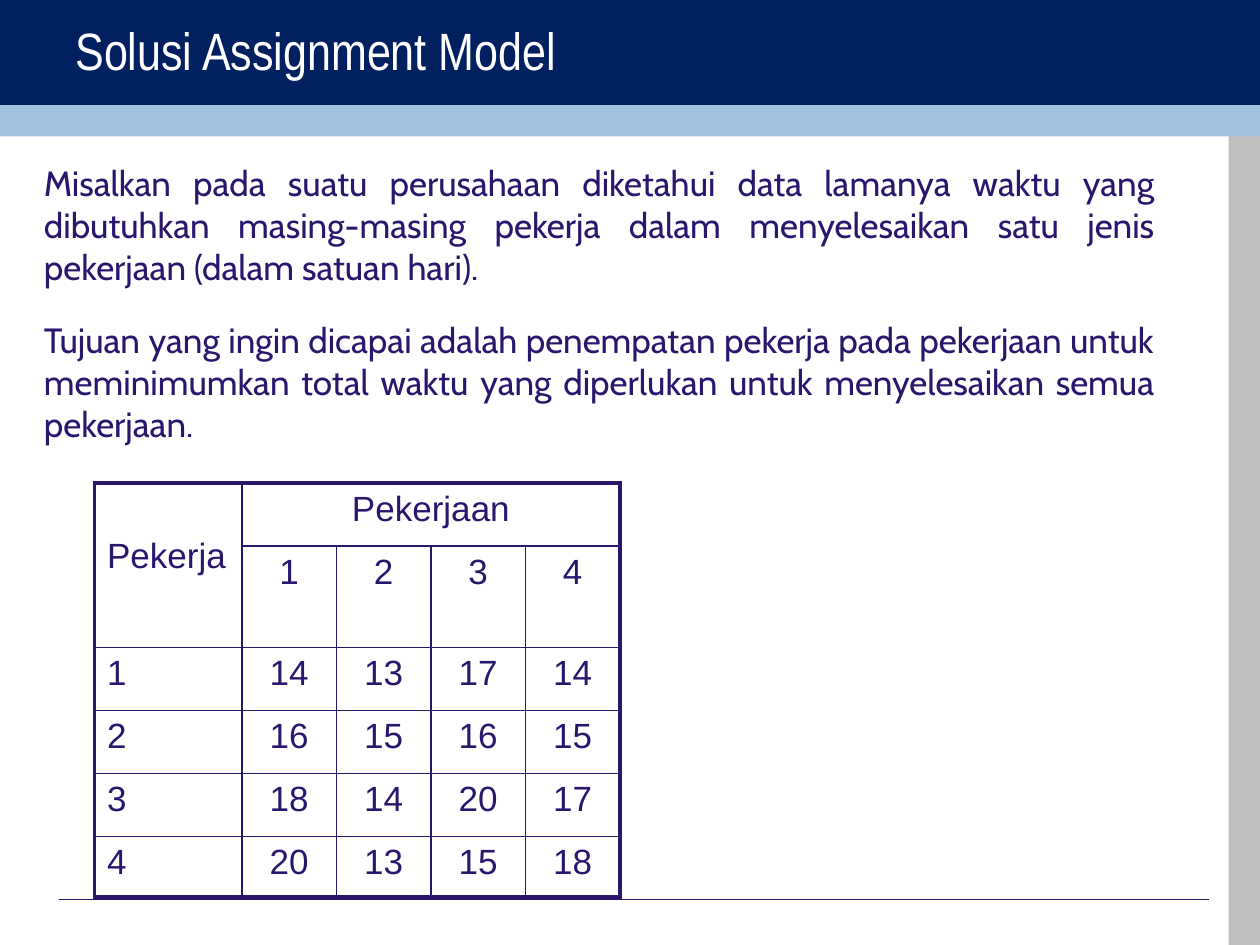
"""Build the assignment model slide with its table of working times."""
import lxml.etree
import pptx
import pptx.dml.color
import pptx.enum.shapes
import pptx.enum.text
import pptx.oxml.ns
import pptx.util

Pt = pptx.util.Pt
ALIGN = pptx.enum.text.PP_ALIGN
ANCHOR = pptx.enum.text.MSO_ANCHOR
NAVY = pptx.dml.color.RGBColor(0x00, 0x20, 0x60)
SKY = pptx.dml.color.RGBColor(0xA3, 0xC2, 0xE0)
SILVER = pptx.dml.color.RGBColor(0xC0, 0xC0, 0xC0)
INDIGO = pptx.dml.color.RGBColor(0x2B, 0x16, 0x6E)
WHITE = pptx.dml.color.RGBColor(0xFF, 0xFF, 0xFF)

BODY = [
    "Misalkan pada suatu perusahaan diketahui data lamanya waktu yang dibutuhkan "
    "masing-masing pekerja dalam menyelesaikan satu jenis pekerjaan (dalam satuan hari).",
    "Tujuan yang ingin dicapai adalah penempatan pekerja pada pekerjaan untuk "
    "meminimumkan total waktu yang diperlukan untuk menyelesaikan semua pekerjaan.",
]
TIMES = [
    ["Pekerja", "Pekerjaan", "", "", ""],
    ["", "1", "2", "3", "4"],
    ["1", "14", "13", "17", "14"],
    ["2", "16", "15", "16", "15"],
    ["3", "18", "14", "20", "17"],
    ["4", "20", "13", "15", "18"],
]
COLUMN_WIDTHS = [84.24, 54, 54, 54, 54]
ROW_HEIGHTS = [36, 56, 36, 36, 36, 34.56]


def add_span(para, text, size, font, color):
    span = para.add_run()
    span.text = text
    span.font.size = Pt(size)
    span.font.name = font
    span.font.color.rgb = color


def add_band(page, left, top, width, height, color):
    band = page.shapes.add_shape(
        pptx.enum.shapes.MSO_SHAPE.RECTANGLE, Pt(left), Pt(top), Pt(width), Pt(height))
    band.shadow.inherit = False
    band.fill.solid()
    band.fill.fore_color.rgb = color
    band.line.fill.background()


def add_rule(page, left, right, y):
    rule = page.shapes.add_connector(
        pptx.enum.shapes.MSO_CONNECTOR.STRAIGHT, Pt(left), Pt(y), Pt(right), Pt(y))
    rule.line.color.rgb = INDIGO
    rule.line.width = Pt(0.75)
    lxml.etree.SubElement(rule._element.spPr, pptx.oxml.ns.qn("a:effectLst"))


def add_text(page, left, top, width, height, texts, size, font, color, align, anchor):
    box = page.shapes.add_textbox(Pt(left), Pt(top), Pt(width), Pt(height))
    frame = box.text_frame
    frame.word_wrap = True
    frame.vertical_anchor = anchor
    for index, text in enumerate(texts):
        para = frame.add_paragraph() if index else frame.paragraphs[0]
        para.alignment = align
        if index:
            para.space_before = Pt(18)
        add_span(para, text, size, font, color)


def add_border(cell, side, width):
    properties = cell._tc.get_or_add_tcPr()
    border = lxml.etree.SubElement(
        properties, pptx.oxml.ns.qn("a:ln" + side), w=str(Pt(width)))
    fill = lxml.etree.SubElement(border, pptx.oxml.ns.qn("a:solidFill"))
    lxml.etree.SubElement(fill, pptx.oxml.ns.qn("a:srgbClr"), val=str(INDIGO))


def style_cell(cell, row, column):
    last_row = row + (cell.span_height if cell.is_merge_origin else 1) == len(TIMES)
    last_column = column + (cell.span_width if cell.is_merge_origin else 1) == len(TIMES[0])
    outer_sides = {"L": column == 0, "R": last_column, "T": row == 0, "B": last_row}
    for side, outer in outer_sides.items():
        add_border(cell, side, 2.25 if outer else 1)
    cell.fill.background()


def add_times_table(page, left, top):
    frame = page.shapes.add_table(
        len(TIMES), len(TIMES[0]), Pt(left), Pt(top),
        Pt(sum(COLUMN_WIDTHS)), Pt(sum(ROW_HEIGHTS)))
    table = frame.table
    table.first_row = False
    table.horz_banding = False
    for column, width in zip(table.columns, COLUMN_WIDTHS):
        column.width = Pt(width)
    for row, height in zip(table.rows, ROW_HEIGHTS):
        row.height = Pt(height)
    table.cell(0, 0).merge(table.cell(1, 0))
    table.cell(0, 1).merge(table.cell(0, 4))
    table.cell(0, 0).margin_top = Pt(30.5)
    for row, texts in enumerate(TIMES):
        for column, text in enumerate(texts):
            cell = table.cell(row, column)
            style_cell(cell, row, column)
            if text:
                para = cell.text_frame.paragraphs[0]
                para.alignment = ALIGN.CENTER if column else ALIGN.LEFT
                add_span(para, text, 20, "Arial", INDIGO)


def main():
    deck = pptx.Presentation()
    deck.slide_width, deck.slide_height = Pt(720), Pt(540)
    page = deck.slides.add_slide(deck.slide_layouts[6])
    add_band(page, 702, 77, 18, 463, SILVER)
    add_rule(page, 34, 691, 514)
    add_band(page, 0, 0, 720, 60, NAVY)
    add_band(page, 0, 60, 720, 18, SKY)
    add_text(page, 36, 6, 486, 45, ["Solusi Assignment Model"], 30,
             "Arial Narrow", WHITE, ALIGN.LEFT, ANCHOR.MIDDLE)
    add_times_table(page, 54, 276)
    add_text(page, 18, 88.5, 649, 169, BODY, 20,
             "Cabin", INDIGO, ALIGN.JUSTIFY, ANCHOR.TOP)
    deck.save("out.pptx")


if __name__ == "__main__":
    main()
